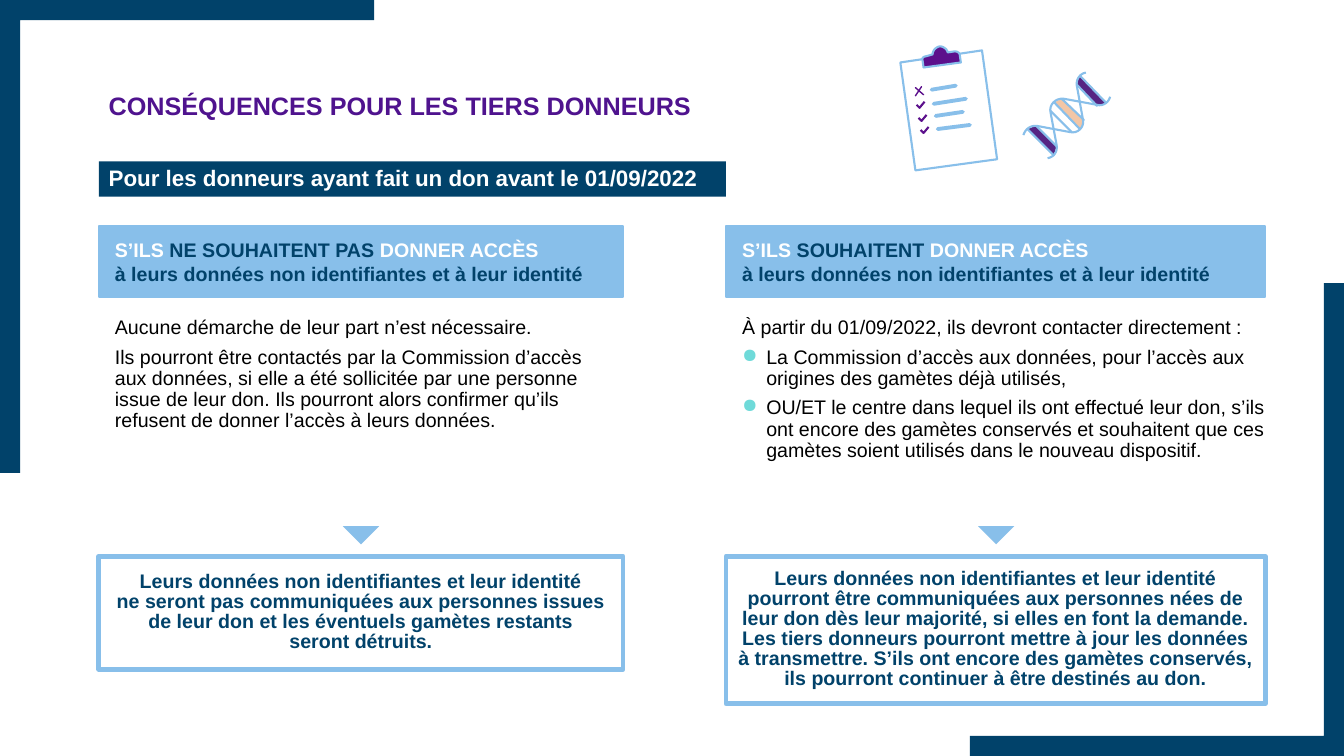
from copy import deepcopy
from lxml import etree
from pptx import Presentation
from pptx.dml.color import RGBColor
from pptx.enum.shapes import MSO_CONNECTOR as LINE, MSO_SHAPE as SHAPE
from pptx.enum.text import MSO_ANCHOR as ANCHOR, PP_ALIGN as ALIGN
from pptx.oxml.ns import qn
from pptx.util import Inches, Pt

NAVY = RGBColor(0x01, 0x42, 0x6A)
SKY = RGBColor(0x88, 0xBF, 0xEA)
TITLE = RGBColor(0x4F, 0x13, 0x8E)
PURPLE = RGBColor(0x5C, 0x10, 0x8C)
PLUM = RGBColor(0x56, 0x25, 0x83)
PEACH = RGBColor(0xF2, 0xC6, 0xA6)
WHITE = RGBColor(0xFF, 0xFF, 0xFF)
BLACK = RGBColor(0, 0, 0)
WIDE, HIGH = 13.33, 7.5

deck = Presentation()
deck.slide_width, deck.slide_height = Inches(WIDE), Inches(HIGH)
slide = deck.slides.add_slide(deck.slide_layouts[6])
shapes = slide.shapes


def write(shape, paras, size=14, color=BLACK, bold=False, align=ALIGN.LEFT,
          anchor=ANCHOR.TOP, inset=(0.1, 0.05, 0.1, 0.05), space=0.9, before=0, bullets=()):
    """Fill a shape with paragraphs, each a string or a list of (text, colour)."""
    frame = shape.text_frame
    frame.word_wrap, frame.vertical_anchor = True, anchor
    (frame.margin_left, frame.margin_top,
     frame.margin_right, frame.margin_bottom) = map(Inches, inset)
    for i, para in enumerate(paras):
        p = frame.add_paragraph() if i else frame.paragraphs[0]
        p.alignment, p.line_spacing, p.space_before = align, space, Pt(before)
        if isinstance(para, str):
            p.text = para
            tints = [color] * len(p.runs)
        else:
            for text, tint in para:
                p.add_run().text = text
            tints = [tint for text, tint in para]
        for run, tint in zip(p.runs, tints):
            font = run.font
            font.name, font.size, font.bold = "Arial", Pt(size), bold
            font.color.rgb = tint
        for br in p._p.findall(qn("a:br")):
            br.append(deepcopy(p.runs[0]._r.rPr))
        if i in bullets:
            props = p._p.get_or_add_pPr()
            props.set("marL", str(Inches(0.24)))
            props.set("indent", str(-Inches(0.24)))
            tint = etree.SubElement(props, qn("a:buClr"))
            etree.SubElement(tint, qn("a:srgbClr"), val="6FDAD9")
            etree.SubElement(props, qn("a:buChar"), char="●")


def draw(points, fill=None, line=None, width=1.5, close=True):
    """Draw an outline; a point of six numbers is a Bézier curve."""
    x, y = points[0]
    build = shapes.build_freeform(Inches(x), Inches(y))
    path = []
    for point in points[1:]:
        if len(point) == 2:
            path.append(point)
        else:
            a, b, c, d, e, f = point
            for t in (k / 8 for k in range(1, 9)):
                u = 1 - t
                path.append((u**3 * x + 3 * u * u * t * a + 3 * u * t * t * c + t**3 * e,
                             u**3 * y + 3 * u * u * t * b + 3 * u * t * t * d + t**3 * f))
        x, y = point[-2:]
    build.add_line_segments([(Inches(a), Inches(b)) for a, b in path], close=close)
    shape = build.convert_to_shape()
    shape.shadow.inherit = False
    if fill is None:
        shape.fill.background()
    else:
        shape.fill.solid()
        shape.fill.fore_color.rgb = fill
    if line is None:
        shape.line.fill.background()
    else:
        shape.line.color.rgb, shape.line.width = line, Pt(width)


# Corner brackets, the second turned half round
corner = [(0, 0), (3.71, 0), (3.71, 0.2), (0.2, 0.2), (0.2, 4.69), (0, 4.69)]
draw(corner, NAVY)
draw([(WIDE - x, HIGH - y) for x, y in corner], NAVY)

# Plain shapes: kind, place, fill, line width, turn, text and its format
GAIN = "à leurs données non identifiantes et à leur identité"
head = dict(color=WHITE, bold=True, anchor=ANCHOR.MIDDLE, inset=(0.16, 0.05, 0.1, 0.05), space=1)
result = dict(color=NAVY, bold=True, anchor=ANCHOR.MIDDLE, align=ALIGN.CENTER, space=0.85)
columns = [
    (0.98, 5.2, 5.2, 3.4, 1.12, "NE SOUHAITENT PAS ", (),
     ["Aucune démarche de leur part n’est nécessaire.",
      "Ils pourront être contactés par la Commission d’accès aux données, si elle a été "
      "sollicitée par une personne issue de leur don. Ils pourront alors confirmer qu’ils "
      "refusent de donner l’accès à leurs données."],
     "Leurs données non identifiantes et leur identité\v"
     "ne seront pas communiquées aux personnes issues\v"
     "de leur don et les éventuels gamètes restants\vseront détruits."),
    (7.2, 5.35, 5.78, 9.7, 1.46, "SOUHAITENT ", (1, 2),
     ["À partir du 01/09/2022, ils devront contacter directement :",
      "La Commission d’accès aux données, pour l’accès aux origines des gamètes déjà utilisés,",
      "OU/ET le centre dans lequel ils ont effectué leur don, s’ils ont encore des gamètes "
      "conservés et souhaitent que ces gamètes soient utilisés dans le nouveau dispositif."],
     "Leurs données non identifiantes et leur identité pourront être communiquées aux "
     "personnes nées de leur don dès leur majorité, si elles en font la demande. Les tiers "
     "donneurs pourront mettre à jour les données à transmettre. S’ils ont encore des gamètes "
     "conservés, ils pourront continuer à être destinés au don."),
]
plain = [(SHAPE.RECTANGLE, (0.98, 1.6, 6.22, 0.35), NAVY, 0, 0, None, {})]
for left, width, room, arrow, tall, wish, bullets, body, outcome in columns:
    title = [[("S’ILS ", WHITE), (wish, NAVY), ("DONNER ACCÈS", WHITE)], [(GAIN, NAVY)]]
    plain += [
        (SHAPE.RECTANGLE, (left, 2.24, width, 0.71), SKY, 1.5, 0, title, head),
        (SHAPE.RECTANGLE, (left, 5.52, width, tall), None, 3.5, 0, [outcome], result),
        (SHAPE.ISOSCELES_TRIANGLE, (arrow, 5.22, 0.36, 0.18), SKY, 0, 180, None, {}),
    ]
    box = shapes.add_textbox(*map(Inches, (left, 2.95, room, 1.99 if bullets else 1.39)))
    write(box, body, inset=(0.16, 0.2, 0.2, 0.05), before=6, bullets=bullets)

for kind, place, fill, edge, turn, text, style in plain:
    shape = shapes.add_shape(kind, *map(Inches, place))
    shape.shadow.inherit = False
    shape.rotation = turn
    if fill is None:
        shape.fill.background()
    else:
        shape.fill.solid()
        shape.fill.fore_color.rgb = fill
    if edge:
        shape.line.color.rgb, shape.line.width = SKY, Pt(edge)
    else:
        shape.line.fill.background()
    if text:
        write(shape, text, **style)

box = shapes.add_textbox(*map(Inches, (0.98, 0.88, 11.14, 0.37)))
write(box, ["CONSÉQUENCES POUR LES TIERS DONNEURS"], size=18, color=TITLE, bold=True,
      anchor=ANCHOR.BOTTOM)
box = shapes.add_textbox(*map(Inches, (0.98, 1.61, 11.14, 0.34)))
write(box, ["Pour les donneurs ayant fait un don avant le 01/09/2022"], size=16, color=WHITE,
      bold=True, before=12)

# DNA: coloured rungs, then strands
draw([(10.71, 0.75), (10.98, 1.02), (10.91, 1.07, 10.87, 1.03, 10.87, 1.03),
      (10.69, 0.85), (10.67, 0.78, 10.71, 0.75, 10.71, 0.75)], PLUM)
draw([(10.53, 0.98), (10.75, 1.2), (10.71, 1.28), (10.45, 1.02)], PEACH)
draw([(10.19, 1.28), (10.27, 1.25), (10.48, 1.45), (10.45, 1.54)], PLUM)
strands = [
    [(10.77, 0.72), (10.71, 0.73, 10.67, 0.79, 10.68, 0.85), (10.74, 1.18),
     (10.76, 1.26, 10.69, 1.33, 10.61, 1.31), (10.29, 1.25),
     (10.22, 1.24, 10.17, 1.28, 10.15, 1.34)],
    [(10.39, 1.57), (10.45, 1.56, 10.49, 1.51, 10.48, 1.44), (10.42, 1.12),
     (10.4, 1.04, 10.47, 0.97, 10.55, 0.98), (10.88, 1.04),
     (10.94, 1.06, 11, 1.01, 11.01, 0.96)],
]
for strand in strands:
    draw(strand, line=SKY, close=False)

# Clipboard: sheet, clip and ticks
draw([(8.93, 0.62), (9.74, 0.5), (9.89, 1.58), (9.08, 1.69)], line=SKY)
draw([(9.52, 0.55), (9.52, 0.53, 9.5, 0.51, 9.47, 0.51), (9.4, 0.52),
      (9.39, 0.48, 9.35, 0.46, 9.32, 0.46), (9.28, 0.47, 9.25, 0.5, 9.25, 0.54),
      (9.18, 0.56), (9.16, 0.56, 9.14, 0.58, 9.15, 0.6), (9.16, 0.67), (9.53, 0.62)],
     PURPLE, SKY)
for x, y in [(9.09, 1.04), (9.11, 1.17), (9.13, 1.29)]:
    draw([(x, y), (x + 0.03, y + 0.03), (x + 0.08, y - 0.03)], line=PURPLE, close=False)

rungs = [(10.71, 0.75, 10.97, 1.02), (10.68, 0.84, 10.88, 1.05), (10.19, 1.28, 10.45, 1.54),
         (10.28, 1.25, 10.48, 1.45), (10.53, 0.98, 10.75, 1.19), (10.45, 1.01, 10.71, 1.28),
         (10.42, 1.1, 10.63, 1.31)]
bars = [(9.24, 0.89, 9.48, 0.85), (9.26, 1.03, 9.58, 0.98),
        (9.28, 1.15, 9.55, 1.11), (9.3, 1.28, 9.62, 1.24)]
cross = [(9.08, 0.87, 9.16, 0.94), (9.08, 0.95, 9.14, 0.86)]
for group, color, width in [(rungs, SKY, 1.5), (bars, SKY, 2.75), (cross, PURPLE, 1)]:
    for ends in group:
        stroke = shapes.add_connector(LINE.STRAIGHT, *map(Inches, ends))
        stroke.line.color.rgb, stroke.line.width = color, Pt(width)
        stroke.line._get_or_add_ln().set("cap", "rnd")
        etree.SubElement(stroke._element.spPr, qn("a:effectLst"))

deck.save("out.pptx")
